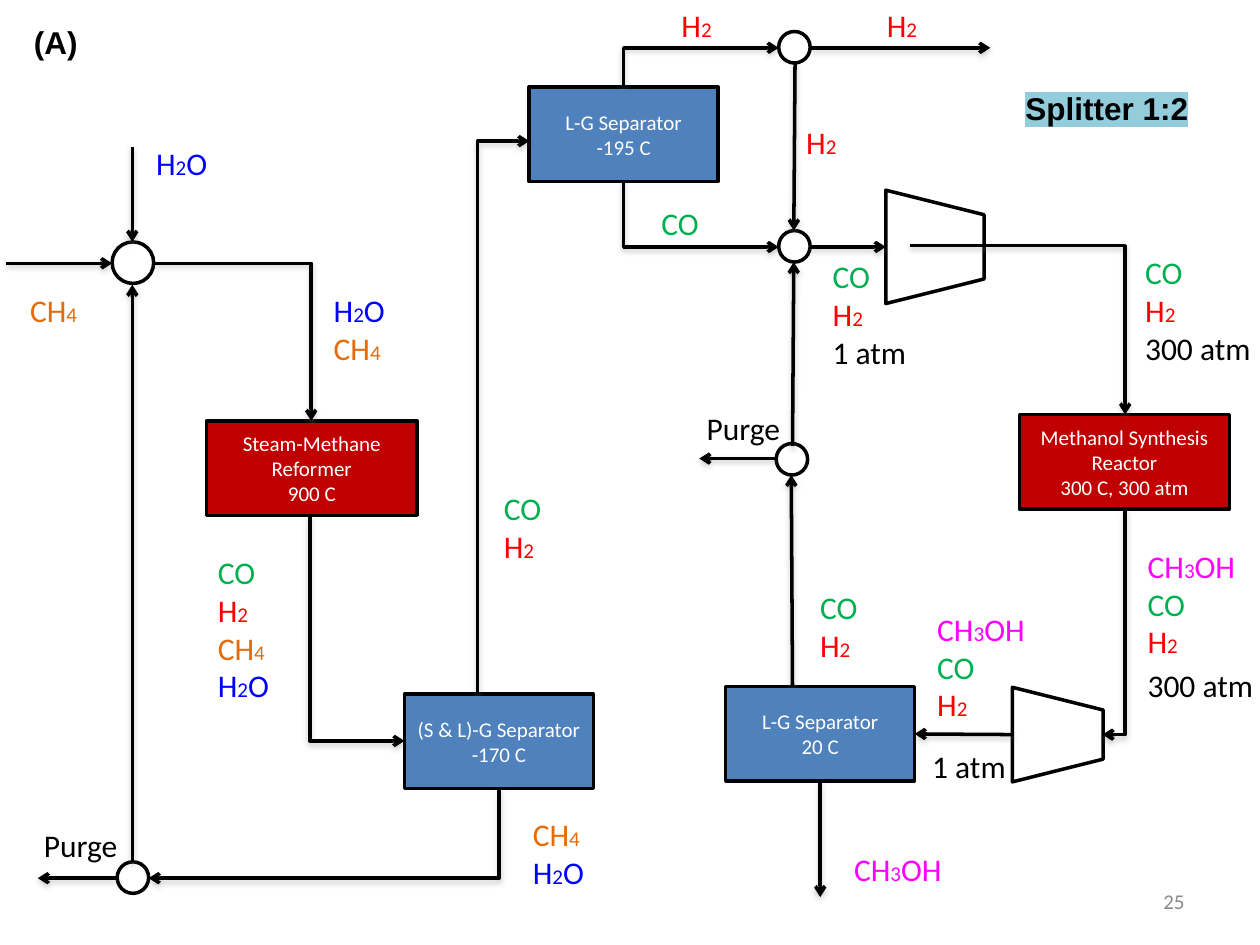
from itertools import groupby
from lxml import etree
from pptx import Presentation
from pptx.dml.color import RGBColor
from pptx.enum.shapes import MSO_CONNECTOR, MSO_SHAPE
from pptx.enum.text import MSO_ANCHOR, MSO_AUTO_SIZE, PP_ALIGN
from pptx.oxml import parse_xml
from pptx.oxml.ns import qn
from pptx.util import Inches, Pt

COLORS = {
    "black": "000000", "white": "FFFFFF", "reactor": "C00000",
    "separator": "4F81BD", "highlight": "93CDDC", "page": "898989",
    "shadow": "808080",
}
SPECIES = {"H2O": "0000FF", "CH4": "E46C0A", "CO": "00B050", "H2": "FF0000", "CH3OH": "FF00FF"}

UNITS = {
    "reformer": (1.64, 3.34, 1.67, "reactor", ["Steam-Methane Reformer", "900 C"]),
    "synthesis": (8.09, 3.29, 1.67, "reactor", ["Methanol Synthesis Reactor", "300 C, 300 atm"]),
    "product separator": (5.76, 5.45, 1.5, "separator", ["L-G Separator", "20 C"]),
    "water separator": (3.21, 5.51, 1.5, "separator", ["(S & L)-G Separator", "-170 C"]),
    "hydrogen separator": (4.2, 0.69, 1.5, "separator", ["L-G Separator", "-195 C"]),
}
UNIT_HEIGHT = 0.75

COMPRESSORS = [(6.97, 1.57, 0.9, 0.78), (8.02, 5.47, 0.75, 0.72)]

FEED_MIXER = (0.89, 1.92, 0.33)
JUNCTIONS = [(6.18, 1.83), (6.16, 3.52), (0.93, 6.84), (6.18, 0.25)]
JUNCTION_SIZE = 0.25

STREAMS = [
    ((1.05, 1.17), (1.05, 1.92)),
    ((0.05, 2.09), (0.89, 2.09)),
    ((6.29, 3.54), (6.3, 2.08)),
    ((6.29, 5.45), (6.28, 3.77)),
    ((6.16, 3.64), (5.55, 3.64)),
    ((1.05, 6.84), (1.05, 2.26)),
    ((0.93, 6.97), (0.3, 6.97)),
    ((6.42, 1.96), (7.03, 1.96)),
    ((6.44, 0.38), (7.86, 0.38)),
    ((6.31, 0.5), (6.3, 1.83)),
]
METHANOL_OUTLET = ((6.51, 6.2), (6.51, 7.12))
SEPARATOR_FEED = ((8.04, 5.83), (7.26, 5.83))

ACROSS_FIRST = [
    ((1.22, 2.09), (2.47, 3.34)),
    ((7.22, 1.95), (8.93, 3.29)),
]
DOWN_OR_UP_FIRST = [
    ((2.46, 4.09), (3.21, 5.88)),
    ((8.93, 4.04), (8.75, 5.83)),
    ((3.79, 5.51), (4.2, 1.12)),
    ((3.96, 6.26), (1.18, 6.97)),
    ((4.95, 0.69), (6.18, 0.38)),
    ((4.95, 1.44), (6.18, 1.96)),
]

LABELS = [
    (1.14, 1.09, 0.83, ["H2O"]),
    (0.14, 2.26, 0.83, ["CH4"]),
    (2.55, 2.26, 0.83, ["H2O", "CH4"]),
    (1.63, 4.34, 0.75, ["CO", "H2", "CH4", "H2O"]),
    (4.13, 6.42, 0.75, ["CH4", "H2O"]),
    (6.51, 1.99, 0.92, ["CO", "H2", "1 atm"]),
    (9.01, 4.29, 1, ["CH3OH", "CO", "H2"]),
    (9.01, 5.24, 1.13, ["300 atm"]),
    (8.99, 1.96, 1.1, ["CO", "H2", "300 atm"]),
    (7.34, 4.79, 1, ["CH3OH", "CO", "H2"]),
    (7.3, 5.88, 1.13, ["1 atm"]),
    (6.41, 4.62, 0.58, ["CO", "H2"]),
    (6.68, 6.7, 1.08, ["CH3OH"]),
    (5.15, 1.57, 0.58, ["CO"]),
    (5.51, 3.2, 1.13, ["Purge"]),
    (0.25, 6.51, 1.13, ["Purge"]),
    (5.31, 0, 0.5, ["H2"]),
    (6.94, 0, 0.5, ["H2"]),
    (6.3, 0.93, 0.5, ["H2"]),
    (3.9, 3.83, 0.92, ["CO", "H2"]),
]
SPLITTER = (8.04, 0.66, 1.72, "Splitter 1:2")
PANEL = (0.17, 0.13, 0.58, "(A)")
PAGE_NUMBER = (7.17, 6.95, 2.33, "25")

DRAWING_NS = "http://schemas.openxmlformats.org/drawingml/2006/main"
SHADOW = (
    f'<a:effectLst xmlns:a="{DRAWING_NS}">'
    '<a:outerShdw blurRad="40000" dist="20000" dir="5400000" rotWithShape="0">'
    f'<a:srgbClr val="{COLORS["shadow"]}"><a:alpha val="38000"/></a:srgbClr>'
    '</a:outerShdw></a:effectLst>'
)


def rgb(name):
    return RGBColor.from_string(COLORS[name])


def style(paragraph, size, color, font="Calibri", bold=False):
    paragraph.font.name = font
    paragraph.font.size = Pt(size)
    paragraph.font.bold = bold
    paragraph.font.color.rgb = color


def add_outline(slide, kind, box, fill="white"):
    shape = slide.shapes.add_shape(kind, *map(Inches, box))
    shape.shadow.inherit = False
    shape.fill.solid()
    shape.fill.fore_color.rgb = rgb(fill)
    shape.line.color.rgb = rgb("black")
    shape.line.width = Pt(2)
    return shape


def add_unit(slide, left, top, width, fill, lines):
    unit = add_outline(slide, MSO_SHAPE.RECTANGLE, (left, top, width, UNIT_HEIGHT), fill)
    frame = unit.text_frame
    frame.word_wrap = True
    frame.vertical_anchor = MSO_ANCHOR.MIDDLE
    frame.text = "\n".join(lines)
    for paragraph in frame.paragraphs:
        paragraph.alignment = PP_ALIGN.CENTER
        style(paragraph, 12, rgb("white"))
    return unit


def add_stream(slide, start, end, kind=MSO_CONNECTOR.STRAIGHT):
    stream = slide.shapes.add_connector(kind, *map(Inches, start + end))
    stream.line.color.rgb = rgb("black")
    stream.line.width = Pt(2)
    etree.SubElement(stream.line._get_or_add_ln(), qn("a:tailEnd"), type="arrow")
    stream._element.spPr.append(parse_xml(SHADOW))
    return stream


def add_corner(slide, start, end, across_first):
    if not across_first:
        (x1, y1), (x2, y2) = start, end
        mid_x, mid_y = (x1 + x2) / 2, (y1 + y2) / 2
        half_x, half_y = (x2 - x1) / 2, (y2 - y1) / 2
        start = (mid_x - half_y, mid_y + half_x)
        end = (mid_x + half_y, mid_y - half_x)
    corner = add_stream(slide, start, end, MSO_CONNECTOR.ELBOW)
    properties = corner._element.spPr
    properties.find(qn("a:prstGeom")).set("prst", "bentConnector2")
    if not across_first:
        properties.find(qn("a:xfrm")).set("rot", "5400000")


def add_text(slide, left, top, width, line_count=1):
    height = 0.1 + 0.3 * line_count
    frame = slide.shapes.add_textbox(*map(Inches, (left, top, width, height))).text_frame
    frame.word_wrap = True
    frame.auto_size = MSO_AUTO_SIZE.SHAPE_TO_FIT_TEXT
    return frame


def add_label(slide, left, top, width, lines):
    frame = add_text(slide, left, top, width, len(lines))
    for index, line in enumerate(lines):
        paragraph = frame.add_paragraph() if index else frame.paragraphs[0]
        is_species = line in SPECIES
        style(paragraph, 18, RGBColor.from_string(SPECIES.get(line, COLORS["black"])))
        for is_digit, letters in groupby(line, str.isdigit):
            run = paragraph.add_run()
            run.text = "".join(letters)
            if is_species and is_digit:
                run.font.size = Pt(12)


def add_heading(slide, left, top, width, heading):
    paragraph = add_text(slide, left, top, width).paragraphs[0]
    paragraph.text = heading
    style(paragraph, 18, rgb("black"), "Arial", True)
    return paragraph


def main():
    deck = Presentation()
    deck.slide_width, deck.slide_height = Inches(10), Inches(7.5)
    slide = deck.slides.add_slide(deck.slide_layouts[6])

    units = {name: add_unit(slide, *unit) for name, unit in UNITS.items()}
    for box in COMPRESSORS:
        add_outline(slide, MSO_SHAPE.TRAPEZOID, box).rotation = 90
    left, top, size = FEED_MIXER
    add_outline(slide, MSO_SHAPE.FLOWCHART_CONNECTOR, (left, top, size, size))
    for left, top in JUNCTIONS:
        add_outline(slide, MSO_SHAPE.OVAL, (left, top, JUNCTION_SIZE, JUNCTION_SIZE))

    for start, end in STREAMS:
        add_stream(slide, start, end)
    add_stream(slide, *METHANOL_OUTLET).begin_connect(units["product separator"], 2)
    add_stream(slide, *SEPARATOR_FEED).end_connect(units["product separator"], 3)
    for corners, across_first in ((ACROSS_FIRST, True), (DOWN_OR_UP_FIRST, False)):
        for start, end in corners:
            add_corner(slide, start, end, across_first)

    for label in LABELS:
        add_label(slide, *label)
    add_heading(slide, *PANEL)
    splitter = add_heading(slide, *SPLITTER)
    highlight = etree.SubElement(splitter.runs[0]._r.get_or_add_rPr(), qn("a:highlight"))
    etree.SubElement(highlight, qn("a:srgbClr"), val=COLORS["highlight"])

    left, top, width, number = PAGE_NUMBER
    page_frame = add_text(slide, left, top, width)
    page_frame.auto_size = MSO_AUTO_SIZE.NONE
    page_frame.vertical_anchor = MSO_ANCHOR.MIDDLE
    page = page_frame.paragraphs[0]
    page.text = number
    page.alignment = PP_ALIGN.RIGHT
    style(page, 12, rgb("page"))

    deck.save("out.pptx")


if __name__ == "__main__":
    main()
